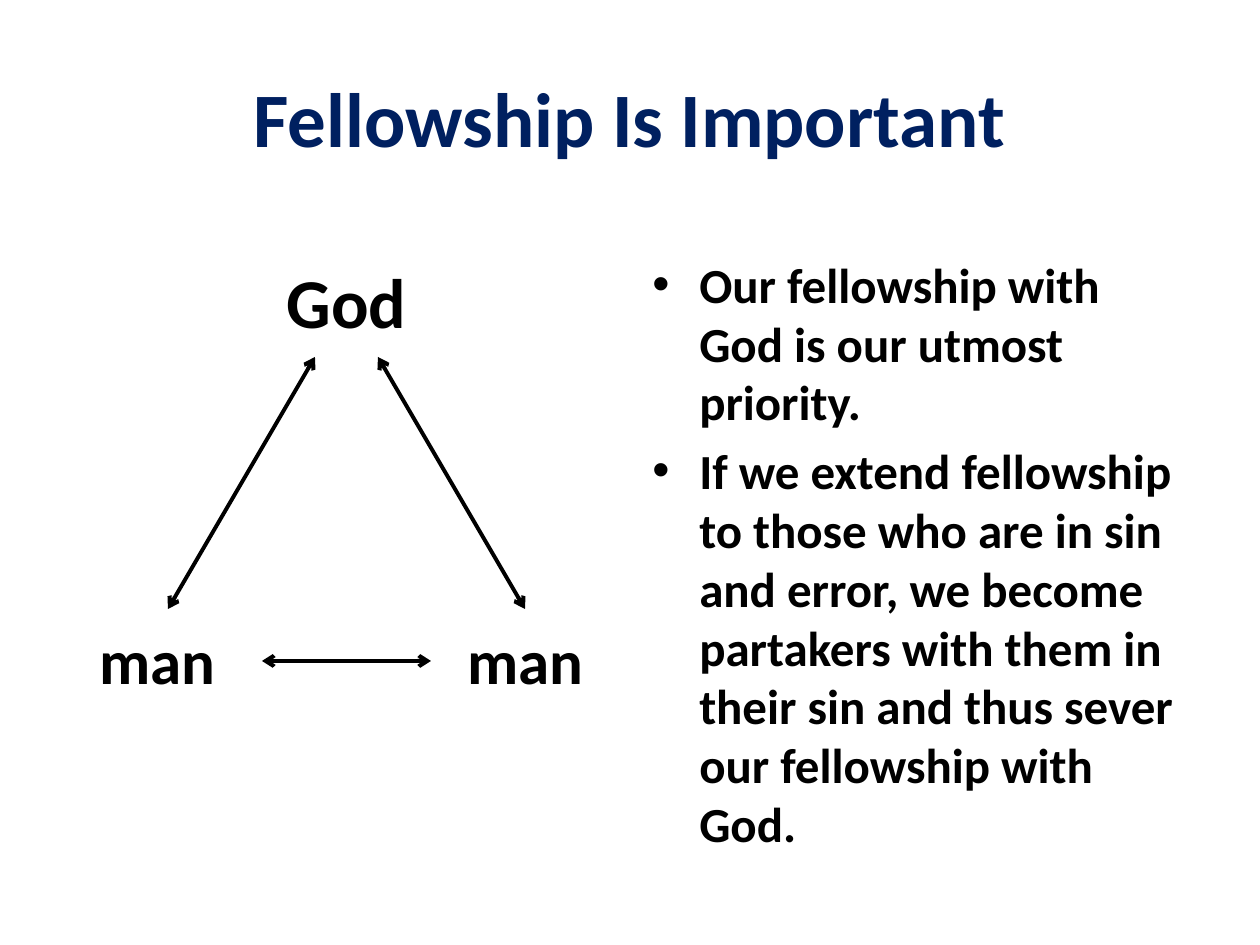
from lxml.etree import SubElement
from pptx import Presentation
from pptx.dml.color import RGBColor
from pptx.enum.shapes import MSO_CONNECTOR
from pptx.enum.text import MSO_ANCHOR, PP_ALIGN
from pptx.oxml.ns import qn
from pptx.util import Emu, Pt

PX = 914400 // 126
NAVY = RGBColor(0x00, 0x20, 0x60)
BLACK = RGBColor(0x00, 0x00, 0x00)
LESSONS = [
    "Our fellowship with God is our utmost priority.",
    "If we extend fellowship to those who are in sin and error, we become "
    "partakers with them in their sin and thus sever our fellowship with God.",
]


def px(length):
    return Emu(length * PX)


def add_text(slide, box, text, size, color=BLACK, align=PP_ALIGN.CENTER, anchor=MSO_ANCHOR.TOP):
    textbox = slide.shapes.add_textbox(*map(px, box))
    frame = textbox.text_frame
    frame.word_wrap = True
    frame.vertical_anchor = anchor
    frame.text = text
    for paragraph in frame.paragraphs:
        paragraph.alignment = align
        for run in paragraph.runs:
            run.font.name = "Calibri"
            run.font.size = Pt(size)
            run.font.bold = True
            run.font.color.rgb = color
    return textbox


def add_bullets(slide, box, items, size):
    textbox = add_text(slide, box, "\n".join(items), size, align=PP_ALIGN.LEFT)
    for index, paragraph in enumerate(textbox.text_frame.paragraphs):
        properties = paragraph._p.get_or_add_pPr()
        properties.set("marL", str(px(47)))
        properties.set("indent", str(px(-47)))
        SubElement(properties, qn("a:buFont")).set("typeface", "Arial")
        SubElement(properties, qn("a:buChar")).set("char", "•")
        if index:
            paragraph.space_before = Pt(size * 0.2)


def add_double_arrow(slide, start, end):
    arrow = slide.shapes.add_connector(MSO_CONNECTOR.STRAIGHT, *map(px, start + end))
    arrow.line.color.rgb = BLACK
    arrow.line.width = Pt(2.25)
    outline = arrow.line._get_or_add_ln()
    for tip in ("a:headEnd", "a:tailEnd"):
        SubElement(outline, qn(tip)).set("type", "arrow")
    SubElement(arrow._element.spPr, qn("a:effectLst"))
    return arrow


def main():
    deck = Presentation()
    deck.slide_width, deck.slide_height = px(1260), px(945)
    slide = deck.slides.add_slide(deck.slide_layouts[6])

    add_text(slide, (63, 38, 1134, 157), "Fellowship Is Important", 44, NAVY,
             anchor=MSO_ANCHOR.MIDDLE)
    add_bullets(slide, (640, 248, 557, 624), LESSONS, 28)

    add_text(slide, (252, 252, 189, 97), "God", 40)
    add_text(slide, (63, 615, 189, 92), "man", 36)
    right_man = add_text(slide, (431, 615, 189, 92), "man", 36)

    add_double_arrow(slide, (315, 357), (168, 609))
    add_double_arrow(slide, (378, 357), (525, 609))
    fellowship = add_double_arrow(slide, (431, 661), (262, 661))
    fellowship.begin_connect(right_man, 1)

    deck.save("out.pptx")


if __name__ == "__main__":
    main()
